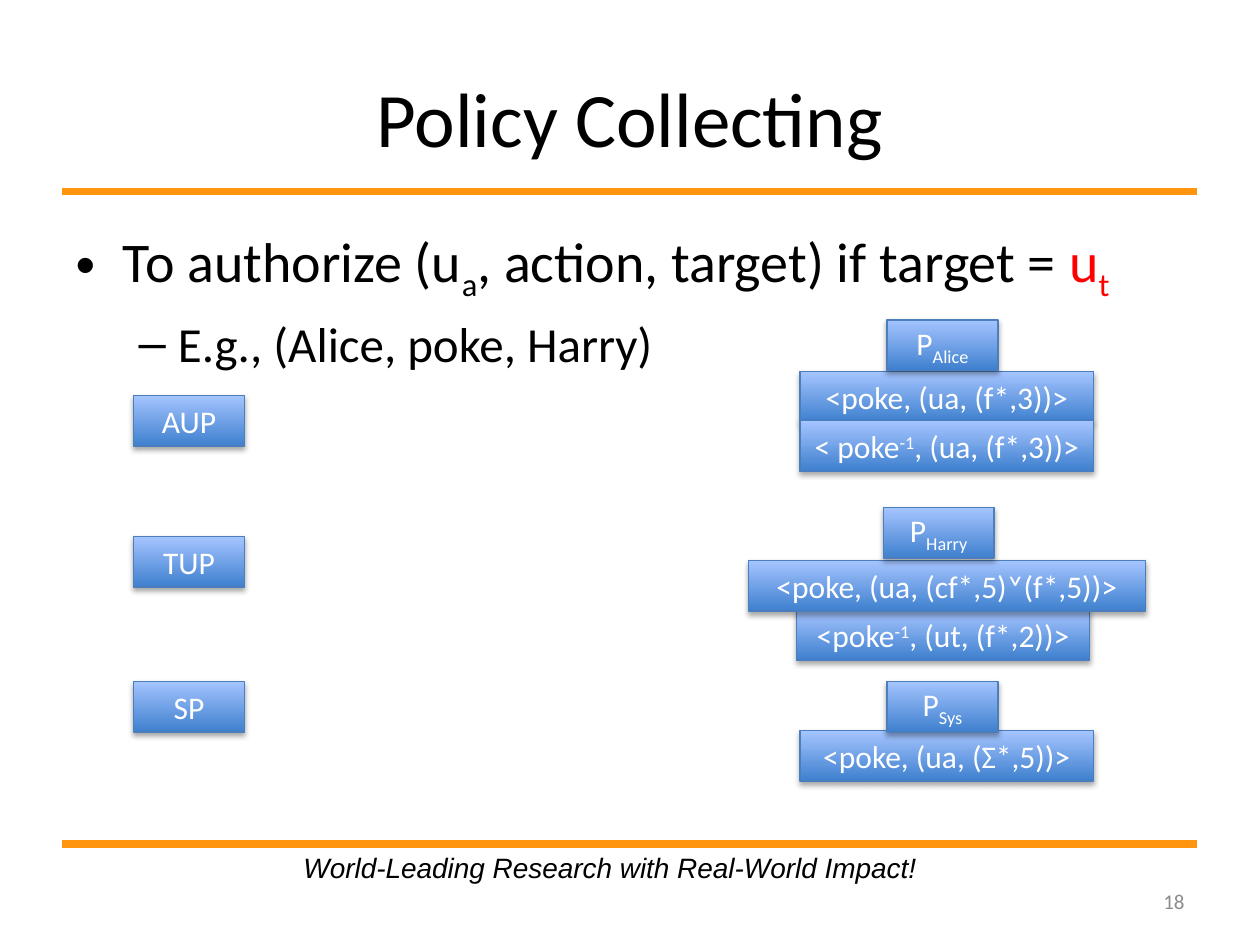
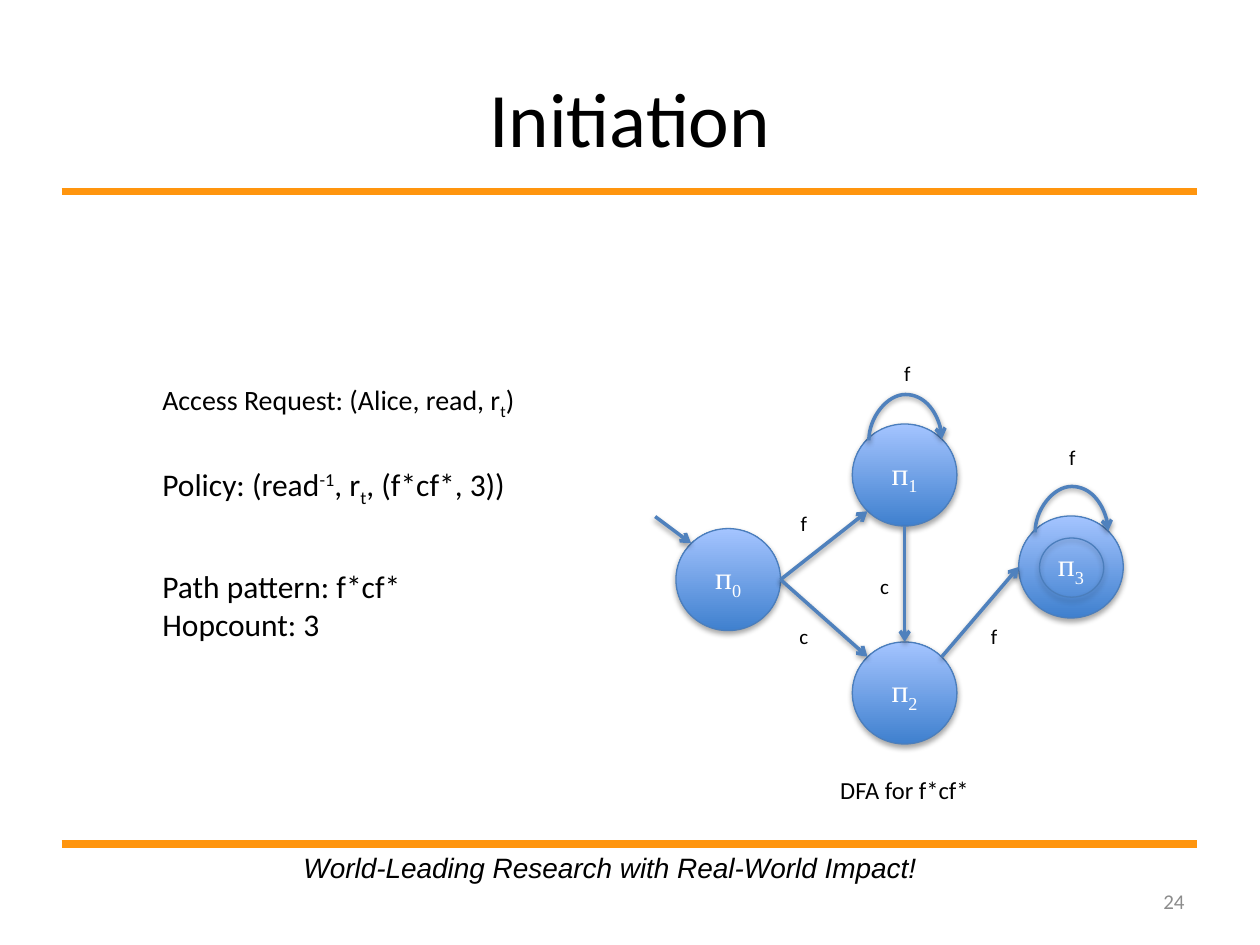
from lxml import etree
from pptx import Presentation
from pptx.dml.color import RGBColor
from pptx.enum.shapes import MSO_CONNECTOR, MSO_SHAPE
from pptx.enum.text import MSO_ANCHOR, MSO_AUTO_SIZE, PP_ALIGN
from pptx.oxml.ns import qn
from pptx.util import Inches, Pt

RECTANGLE, ELLIPSE = MSO_SHAPE.RECTANGLE, MSO_SHAPE.OVAL
STRAIGHT, CURVE = MSO_CONNECTOR.STRAIGHT, MSO_CONNECTOR.CURVE
LEFT, CENTER, RIGHT = PP_ALIGN.LEFT, PP_ALIGN.CENTER, PP_ALIGN.RIGHT
TOP, MIDDLE = MSO_ANCHOR.TOP, MSO_ANCHOR.MIDDLE
FIT = MSO_AUTO_SIZE.SHAPE_TO_FIT_TEXT
TITLE_AND_BODY, TITLE_ONLY = 1, 5
SUB, SUPER = -25000, 30000

BLACK, WHITE, RED, GRAY = "000000", "FFFFFF", "FF0000", "8C8C8C"
ORANGE, ARROW_BLUE, EDGE_BLUE = "FF950E", "4F81BD", "4B7EBC"
DARK_BLUE, LIGHT_BLUE = "3F80CE", "A4C4FF"
SANS, FOOTER_FONT, STATE_FONT = "Calibri", "Arial", "Times New Roman"
SLOGAN = "World-Leading Research with Real-World Impact!"

TAG_WIDTH, BOX_HEIGHT, RULE_WIDTH = 0.88, 0.4, 2.33
STATE_WIDTH, STATE_HEIGHT = 0.83, 0.81
DIAGONAL = 0.71


def color(value):
    """Turn a hex string into a colour."""
    return RGBColor.from_string(value)


class SlideBuilder:
    """Hold the deck's style and the slide being built."""

    def __init__(self, deck):
        """Keep the deck."""
        self.deck = deck
        self.page = None

    def start(self, layout, title, number):
        """Open a slide with its title, bands, slogan and page number."""
        self.page = self.deck.slides.add_slide(self.deck.slide_layouts[layout])
        for y in (1.52, 6.7):
            self.line(STRAIGHT, (0.49, y), (9.5, y), ORANGE, 4.31)
        heading = self.page.shapes.title
        self.place(heading, 0.5, 0.3, 9, 1.25)
        heading.text_frame.vertical_anchor = MIDDLE
        self.add_spans(heading.text_frame.paragraphs[0], [title], 44, align=CENTER)
        self.text(7.17, 6.95, 2.33, 0.4, [[number]], 12, GRAY, align=RIGHT, anchor=MIDDLE)
        self.text(2.31, 6.7, 5.08, 0.37, [[SLOGAN]], 16, font=FOOTER_FONT,
                  italic=True, wrap=False)

    def place(self, shape, left, top, width, height):
        """Move and size a shape."""
        shape.left, shape.top = Inches(left), Inches(top)
        shape.width, shape.height = Inches(width), Inches(height)

    def add_spans(self, para, spans, size, tint=BLACK, font=SANS, align=LEFT, italic=None):
        """Add spans, each a string or (text, baseline, colour), to a paragraph."""
        para.alignment = align
        for item in spans:
            words, baseline, own_tint = item if isinstance(item, tuple) else (item, 0, tint)
            span = para.add_run()
            span.text = words
            span.font.size, span.font.name = Pt(size), font
            span.font.italic = italic
            span.font.color.rgb = color(own_tint)
            if baseline:
                span.font._element.set("baseline", str(baseline))

    def bullets(self, left, top, width, height, items):
        """Fill the body placeholder with (level, size, spans) items."""
        body = self.page.placeholders[1]
        self.place(body, left, top, width, height)
        frame = body.text_frame
        for index, (level, size, spans) in enumerate(items):
            para = frame.add_paragraph() if index else frame.paragraphs[0]
            para.level = level
            if not index:
                para.space_before = Pt(0)
            self.add_spans(para, spans, size)

    def text(self, left, top, width, height, lines, size, tint=BLACK, font=SANS,
             align=LEFT, anchor=TOP, italic=None, wrap=True):
        """Add a text box with one paragraph per line."""
        box = self.page.shapes.add_textbox(
            Inches(left), Inches(top), Inches(width), Inches(height))
        frame = box.text_frame
        frame.word_wrap, frame.vertical_anchor = wrap, anchor
        if anchor == TOP:
            frame.auto_size = FIT
        for index, spans in enumerate(lines):
            para = frame.add_paragraph() if index else frame.paragraphs[0]
            self.add_spans(para, spans, size, tint, font, align, italic)
        return frame

    def label(self, left, top, letter):
        """Add a one-letter transition label."""
        frame = self.text(left, top, 0.18, 0.3, [[letter]], 12, align=CENTER)
        frame.margin_left, frame.margin_right = Inches(0.04), 0

    def cast_shadow(self, properties, alpha, distance):
        """Add a soft downward shadow to shape properties."""
        effects = properties.find(qn("a:effectLst"))
        shadow = etree.SubElement(effects, qn("a:outerShdw"), blurRad="40000",
                                  dist=str(distance), dir="5400000", rotWithShape="0")
        shade = etree.SubElement(shadow, qn("a:srgbClr"), val=BLACK)
        etree.SubElement(shade, qn("a:alpha"), val=str(alpha))

    def block(self, kind, left, top, width, height, spans=(), font=SANS, filled=True):
        """Add a shaded blue shape with centred white text."""
        shape = self.page.shapes.add_shape(
            kind, Inches(left), Inches(top), Inches(width), Inches(height))
        if filled:
            shape.fill.gradient()
            shape.fill.gradient_angle = 90
            for stop, shade in zip(shape.fill.gradient_stops, (DARK_BLUE, LIGHT_BLUE)):
                stop.color.rgb = color(shade)
        else:
            shape.fill.background()
        shape.line.color.rgb, shape.line.width = color(EDGE_BLUE), Pt(0.75)
        shape.shadow.inherit = False
        self.cast_shadow(shape._element.spPr, 35000, 23000)
        frame = shape.text_frame
        frame.word_wrap, frame.vertical_anchor = True, MIDDLE
        self.add_spans(frame.paragraphs[0], spans, 18, WHITE, font, CENTER)

    def line(self, kind, start, end, tint, width):
        """Add a plain line and return its shape properties."""
        link = self.page.shapes.add_connector(kind, *map(Inches, start + end))
        link.line.color.rgb, link.line.width = color(tint), Pt(width)
        properties = link._element.spPr
        etree.SubElement(properties, qn("a:effectLst"))
        return properties

    def arrow(self, start, end, kind=STRAIGHT):
        """Add a shadowed arrow and return its shape properties."""
        properties = self.line(kind, start, end, ARROW_BLUE, 2)
        etree.SubElement(properties.find(qn("a:ln")), qn("a:tailEnd"), type="arrow")
        self.cast_shadow(properties, 38000, 20000)
        return properties

    def loop(self, state):
        """Add a curved arrow from a state back to itself."""
        x, y = state[0], state[1] - 0.28
        properties = self.arrow((x + 0.01, y + 0.29), (x, y - 0.29), CURVE)
        properties.find(qn("a:xfrm")).set("rot", "5400000")
        adjustments = properties.find(qn("a:prstGeom")).find(qn("a:avLst"))
        etree.SubElement(adjustments, qn("a:gd"), name="adj1", fmla="val 3700000")


def site(state, across, down):
    """Give a point on a state's outline from its unit offsets."""
    return state[0] + across * STATE_WIDTH / 2, state[1] + down * STATE_HEIGHT / 2


def build_policy_collecting(builder):
    """Build the slide that lists the collected policies."""
    builder.start(TITLE_AND_BODY, "Policy Collecting", "18")
    builder.bullets(0.5, 1.75, 9, 4.95, [
        (0, 32, ["To authorize (u", ("a", SUB, BLACK), ", action, target) if target = ",
                 ("u", 0, RED), ("t", SUB, RED)]),
        (1, 28, ["E.g., (Alice, poke, Harry)"]),
    ])
    inverse = ("-1", SUPER, WHITE)
    rules = [
        (6.35, 2.95, RULE_WIDTH, ["<poke, (ua, (f*,3))>"]),
        (6.32, 4.84, RULE_WIDTH, ["<poke", inverse, ", (ut, (f*,2))>"]),
        (6.35, 5.8, RULE_WIDTH, ["<poke, (ua, (Σ*,5))>"]),
        (6.35, 3.34, RULE_WIDTH, ["< poke", inverse, ", (ua, (f*,3))>"]),
        (5.94, 4.45, 3.15, ["<poke, (ua, (cf*,5)˅(f*,5))>"]),
    ]
    for left, top, width, spans in rules:
        builder.block(RECTANGLE, left, top, width, BOX_HEIGHT, spans)
    for top, name in ((3.14, "AUP"), (4.26, "TUP"), (5.41, "SP")):
        builder.block(RECTANGLE, 1.06, top, TAG_WIDTH, BOX_HEIGHT, [name])
    for left, top, owner in ((7.04, 2.54, "Alice"), (7.01, 4.03, "Harry"), (7.04, 5.41, "Sys")):
        builder.block(RECTANGLE, left, top, TAG_WIDTH, BOX_HEIGHT,
                      ["P", (owner, SUB, WHITE)])


def build_initiation(builder):
    """Build the slide with the request and its automaton."""
    builder.start(TITLE_ONLY, "Initiation", "24")
    target = ("t", SUB, BLACK)
    notes = [
        (2.99, 0.37, 16, [["Access Request: (Alice, read, r", target, ")"]]),
        (3.64, 0.4, 18, [["Policy: (read", ("-1", SUPER, BLACK), ", r", target,
                          ", (f*cf*, 3))"]]),
        (4.45, 0.71, 18, [["Path pattern: f*cf*"], ["Hopcount: 3"]]),
    ]
    for top, height, size, lines in notes:
        builder.text(1.19, top, 3.43, height, lines, size)

    states = [(5.78, 4.6), (7.18, 3.77), (7.18, 5.5), (8.5, 4.5)]
    for index, state in enumerate(states):
        left, top = site(state, -1, -1)
        builder.block(ELLIPSE, left, top, STATE_WIDTH, STATE_HEIGHT,
                      ["п", (str(index), SUB, WHITE)], STATE_FONT)

    first, upper, lower, final = states
    transitions = [
        ((5.2, 4.1), site(first, -DIAGONAL, -DIAGONAL)),
        (site(first, 1, 0), site(upper, -DIAGONAL, DIAGONAL)),
        (site(first, 1, 0), site(lower, -DIAGONAL, -DIAGONAL)),
        (site(upper, 0, 1), site(lower, 0, -1)),
        (site(lower, DIAGONAL, -DIAGONAL), site(final, -1, 0)),
    ]
    for start, end in transitions:
        builder.arrow(start, end)
    for state in (upper, final):
        builder.loop(state)

    for left, top, letter in ((7.09, 2.81, "f"), (6.27, 4, "f"), (8.4, 3.48, "f"),
                              (6.27, 4.9, "c"), (6.91, 4.5, "c"), (7.78, 4.9, "f")):
        builder.label(left, top, letter)
    builder.text(6.57, 6.1, 1.24, 0.34, [["DFA for f*cf*"]], 14)
    builder.block(ELLIPSE, 8.25, 4.27, 0.51, 0.47, filled=False)


def main():
    """Build and save the deck."""
    deck = Presentation()
    deck.slide_width, deck.slide_height = Inches(10), Inches(7.5)
    builder = SlideBuilder(deck)
    build_policy_collecting(builder)
    build_initiation(builder)
    deck.save("out.pptx")


if __name__ == "__main__":
    main()
